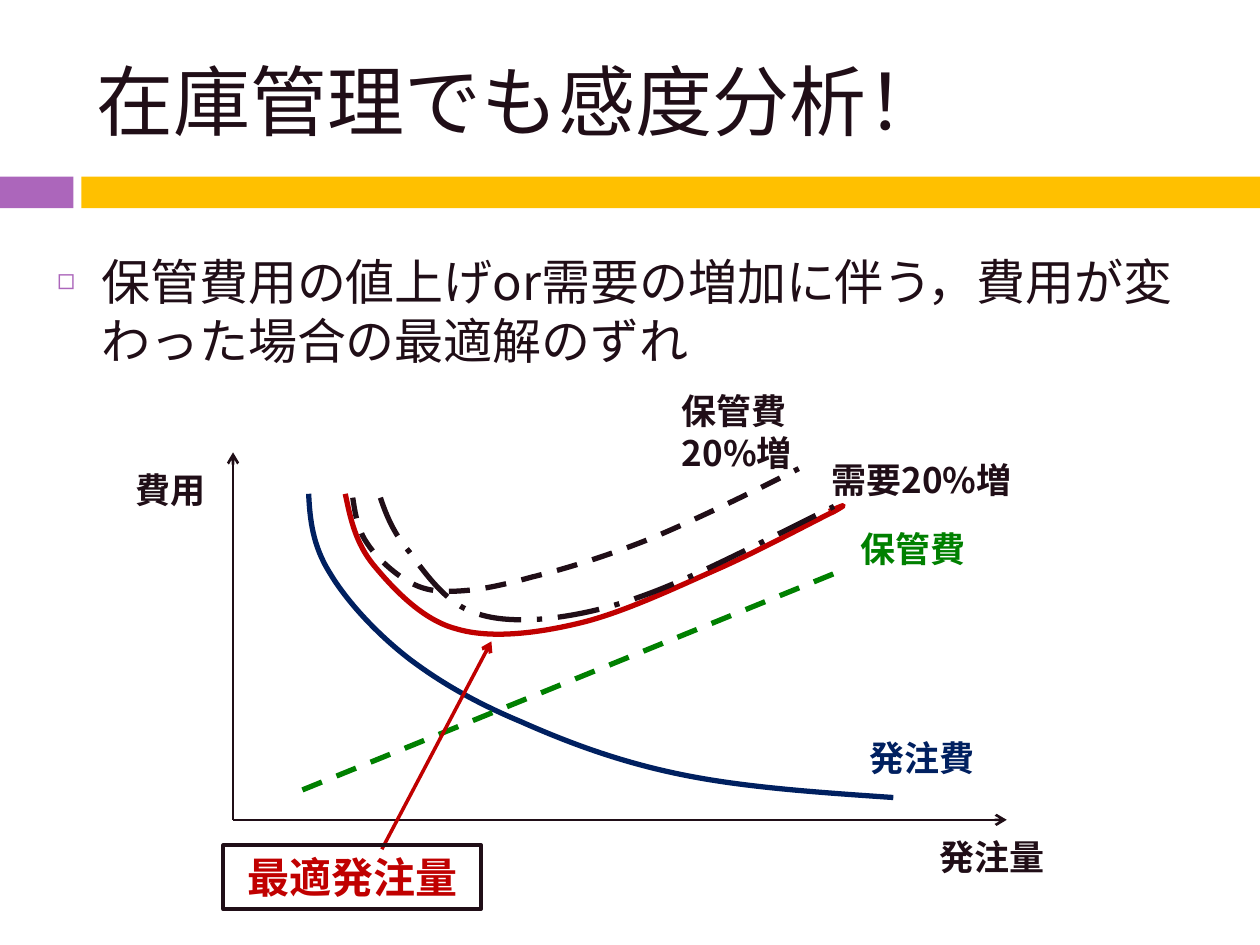
from dataclasses import dataclass

from lxml.etree import SubElement
from pptx import Presentation
from pptx.dml.color import RGBColor
from pptx.enum.dml import MSO_LINE_DASH_STYLE as Dash
from pptx.enum.shapes import MSO_CONNECTOR as Connector, MSO_SHAPE as Shape
from pptx.enum.text import MSO_ANCHOR as Anchor, MSO_AUTO_SIZE as AutoSize, PP_ALIGN as Align
from pptx.oxml.ns import qn
from pptx.util import Pt


@dataclass(frozen=True)
class Theme:
    font: str = "Noto Sans CJK JP"
    ink: str = "200E17"
    purple: str = "AC66BB"
    yellow: str = "FFC000"
    navy: str = "002060"
    green: str = "008000"
    red: str = "C00000"
    title_size: int = 44
    body_size: int = 28
    box_size: int = 24
    label_size: int = 20
    axis_width: float = 1.5
    curve_width: float = 3
    frame_width: float = 2


THEME = Theme()

# Each curve is a start point, then two control points and an end point per segment
ORDER_COST = [
    (176.4, 282.2),
    (177.1, 296.6), (178.6, 311.8), (188.6, 327.6),
    (198, 343.4), (215.3, 362.2), (234, 376.6),
    (252, 390.2), (272.2, 401.8), (298.1, 412.6),
    (324, 424.1), (354.2, 435.6), (390.2, 442.8),
    (425.5, 450), (468, 452.9), (510.5, 455.8),
]
TOTAL_COST = [
    (197.3, 282.2),
    (200.2, 295.9), (203, 310.3), (213.8, 323.3),
    (224.6, 336.2), (241.2, 354.2), (260.6, 359.3),
    (279.4, 365), (305.3, 362.2), (329.8, 356.4),
    (355, 350.6), (385.2, 336.2), (409.7, 325.4),
    (434.2, 314.6), (465.8, 297.4), (476.6, 292.3),
    (486.7, 286.6), (480.2, 289.4), (473.8, 292.3),
]
STORAGE_UP = [
    (201.6, 284.4),
    (203, 293.8), (204.5, 303.1), (210.2, 311),
    (216, 319.7), (226.8, 329), (235.4, 333.4),
    (244.1, 337.7), (251.3, 338.4), (262.8, 337.7),
    (274.3, 337), (285.8, 334.8), (303.8, 329.8),
    (321.8, 325.4), (345.6, 318.2), (370.8, 308.2),
    (396.7, 297.4), (426.2, 283), (456.5, 267.8),
]
DEMAND_UP = [
    (217.4, 284.4),
    (221, 295.2), (225.4, 305.3), (234, 315.4),
    (241.9, 326.2), (252.7, 341.3), (265.7, 347.8),
    (278.6, 354.2), (293.8, 355), (312.5, 353.5),
    (330.5, 351.4), (349.2, 347.8), (376.6, 337),
    (403.9, 326.2), (439.9, 307.4), (476.6, 289.4),
]


def write(frame, text, *, size, color=THEME.ink, bold=False, align=Align.LEFT,
          anchor=Anchor.TOP):
    frame.word_wrap = True
    frame.auto_size = AutoSize.NONE
    frame.vertical_anchor = anchor
    paragraph = frame.paragraphs[0]
    paragraph.alignment = align
    run = paragraph.add_run()
    run.text = text
    run.font.name = THEME.font
    run.font.size = Pt(size)
    run.font.bold = bold
    run.font.color.rgb = RGBColor.from_string(color)
    SubElement(run.font._element, qn("a:ea"), typeface=THEME.font)
    return paragraph


def place(shape, left, top, width, height):
    shape.left, shape.top = Pt(left), Pt(top)
    shape.width, shape.height = Pt(width), Pt(height)


def style_line(line, color, width, dash=None):
    line.color.rgb = RGBColor.from_string(color)
    line.width = Pt(width)
    if dash:
        line.dash_style = dash


def add_bullet(paragraph, char, color, percent, indent):
    props = paragraph._p.get_or_add_pPr()
    props.set("marL", str(Pt(indent)))
    props.set("indent", str(-Pt(indent)))
    SubElement(SubElement(props, qn("a:buClr")), qn("a:srgbClr"), val=color)
    SubElement(props, qn("a:buSzPct"), val=str(percent * 1000))
    SubElement(props, qn("a:buChar"), char=char)


def add_bar(slide, left, width, color):
    bar = slide.shapes.add_shape(Shape.RECTANGLE, Pt(left), Pt(101), Pt(width), Pt(18))
    bar.shadow.inherit = False
    bar.fill.solid()
    bar.fill.fore_color.rgb = RGBColor.from_string(color)
    bar.line.fill.background()


def add_line(slide, start, end, color, width, dash=None, arrow=False):
    ends = [Pt(value) for value in (*start, *end)]
    connector = slide.shapes.add_connector(Connector.STRAIGHT, *ends)
    style_line(connector.line, color, width, dash)
    if arrow:
        SubElement(connector.line._get_or_add_ln(), qn("a:tailEnd"), type="arrow")
    SubElement(connector._element.spPr, qn("a:effectLst"))


def add_curve(slide, points, color, dash=None):
    start, *rest = [(Pt(x), Pt(y)) for x, y in points]
    builder = slide.shapes.build_freeform(*start)
    builder.add_line_segments(rest, close=False)
    curve = builder.convert_to_shape()
    # Join every three straight steps into one Bezier segment
    outline = next(curve._element.iter(qn("a:path")))
    steps = outline.findall(qn("a:lnTo"))
    for first in range(0, len(steps), 3):
        bezier = SubElement(outline, qn("a:cubicBezTo"))
        for step in steps[first:first + 3]:
            bezier.append(step[0])
            outline.remove(step)
    curve.shadow.inherit = False
    curve.fill.background()
    style_line(curve.line, color, THEME.curve_width, dash)


def add_label(slide, text, left, top, width, height=32, color=THEME.ink):
    label = slide.shapes.add_textbox(Pt(left), Pt(top), Pt(width), Pt(height))
    write(label.text_frame, text, size=THEME.label_size, color=color, bold=True)


def add_answer_box(slide, text):
    box = slide.shapes.add_shape(Shape.RECTANGLE, Pt(127.5), Pt(483), Pt(147.5), Pt(36.5))
    box.shadow.inherit = False
    box.fill.background()
    style_line(box.line, THEME.ink, THEME.frame_width)
    write(box.text_frame, text, size=THEME.box_size, color=THEME.red, bold=True,
          align=Align.CENTER, anchor=Anchor.MIDDLE)


def main():
    deck = Presentation()
    deck.slide_width, deck.slide_height = Pt(720), Pt(540)
    slide = deck.slides.add_slide(deck.slide_layouts[1])

    # Heading band
    add_bar(slide, 0, 42, THEME.purple)
    add_bar(slide, 46.5, 673.5, THEME.yellow)

    # Title and list
    title, body = slide.shapes.title, slide.placeholders[1]
    place(title, 48, 18, 642, 78)
    write(title.text_frame, "在庫管理でも感度分析！", size=THEME.title_size,
          anchor=Anchor.MIDDLE)
    place(body, 25.5, 140, 674.5, 385)
    topic = write(body.text_frame,
                  "保管費用の値上げor需要の増加に伴う，費用が変わった場合の最適解のずれ",
                  size=THEME.body_size)
    topic.space_before = Pt(7)
    add_bullet(topic, "◻", THEME.purple, percent=60, indent=25.2)

    # Axes
    origin = (133.2, 468.5)
    for tip in ((133.2, 258.5), (575.3, 468.5)):
        add_line(slide, origin, tip, THEME.ink, THEME.axis_width, arrow=True)
    add_label(slide, "費用", 70.5, 264, 57)
    add_label(slide, "発注量", 530, 474, 85)

    # Base costs
    add_curve(slide, ORDER_COST, THEME.navy)
    add_label(slide, "発注費", 490, 417.5, 85, color=THEME.navy)
    add_label(slide, "保管費", 484.5, 298, 85, color=THEME.green)
    add_line(slide, (172.8, 451.4), (478.8, 326.9), THEME.green, THEME.curve_width, Dash.DASH)
    add_curve(slide, TOTAL_COST, THEME.red)

    # Optimum
    add_line(slide, (218.2, 485.3), (280.8, 366.5), THEME.red, THEME.frame_width, arrow=True)
    add_answer_box(slide, "最適発注量")

    # Costs after each increase
    add_curve(slide, STORAGE_UP, THEME.ink, Dash.DASH)
    add_curve(slide, DEMAND_UP, THEME.ink, Dash.LONG_DASH_DOT)
    add_label(slide, "保管費20%増", 382.5, 219, 85, 55.5)
    add_label(slide, "需要20%増", 468, 258.5, 142)

    deck.save("out.pptx")


if __name__ == "__main__":
    main()
